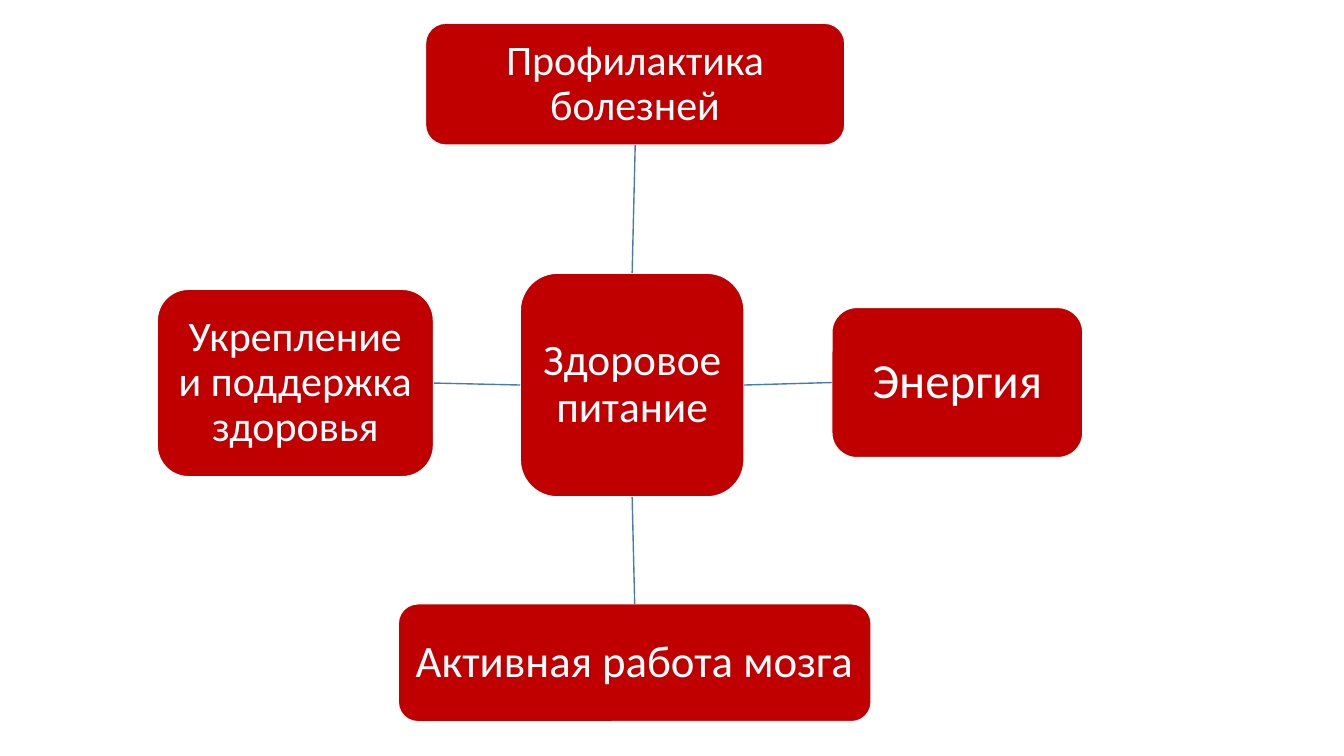
"""Builds a radial diagram of the benefits of healthy eating."""
from dataclasses import dataclass

from lxml import etree
from pptx import Presentation
from pptx.dml.color import RGBColor
from pptx.enum.shapes import MSO_CONNECTOR, MSO_SHAPE
from pptx.enum.text import MSO_ANCHOR, PP_ALIGN
from pptx.oxml.ns import qn
from pptx.util import Inches, Pt

ROUNDED = MSO_SHAPE.ROUNDED_RECTANGLE
STRAIGHT = MSO_CONNECTOR.STRAIGHT
MIDDLE = MSO_ANCHOR.MIDDLE
CENTER = PP_ALIGN.CENTER
TOP, LEFT, BOTTOM, RIGHT = range(4)


@dataclass(frozen=True)
class Theme:
    """Colours, font and type sizes of the slide."""
    box: RGBColor = RGBColor(0xC0, 0x00, 0x00)
    white: RGBColor = RGBColor(0xFF, 0xFF, 0xFF)
    spoke: RGBColor = RGBColor(0x49, 0x7C, 0xAB)
    font: str = "Calibri"
    hub: int = 31
    small: int = 30
    medium: int = 32
    large: int = 35


THEME = Theme()

HUB = ("Здоровое питание", (5.16, 2.71, 2.22, 2.22), THEME.hub, 0.09)
BENEFITS = [
    (TOP, BOTTOM, ("Профилактика болезней", (4.22, 0.23, 4.16, 1.21), THEME.small, 0.08)),
    (RIGHT, LEFT, ("Энергия", (8.25, 3.05, 2.49, 1.49), THEME.large, 0.1)),
    (BOTTOM, TOP, ("Активная работа мозга", (3.95, 5.99, 4.69, 1.17), THEME.medium, 0.09)),
    (LEFT, RIGHT, ("Укрепление и поддержка здоровья", (1.56, 2.87, 2.74, 1.86),
                   THEME.small, 0.08)),
]


def add_box(s, text, frame, size, inset):
    """Add a rounded box with centred white text."""
    sp = s.shapes.add_shape(ROUNDED, *map(Inches, frame))
    sp.shadow.inherit = False
    sp.fill.solid()
    sp.fill.fore_color.rgb = THEME.box
    sp.line.color.rgb = THEME.white
    sp.line.width = Pt(1)
    tf = sp.text_frame
    tf.word_wrap = True
    tf.vertical_anchor = MIDDLE
    tf.margin_left = tf.margin_right = tf.margin_top = tf.margin_bottom = Inches(inset)
    p = tf.paragraphs[0]
    p.text = text
    p.alignment = CENTER
    p.line_spacing = 0.9
    p.font.name = THEME.font
    p.font.size = Pt(size)
    p.font.color.rgb = THEME.white
    return sp


def add_spoke(s, hub, hub_side, box, box_side):
    """Join a side of the hub to the facing side of a box."""
    line = s.shapes.add_connector(STRAIGHT, 0, 0, 0, 0)
    line.begin_connect(hub, hub_side)
    line.end_connect(box, box_side)
    line.line.color.rgb = THEME.spoke
    line.line.width = Pt(1)
    etree.SubElement(line._element.spPr, qn("a:effectLst"))


def main():
    """Build and save the slide."""
    prs = Presentation()
    prs.slide_width, prs.slide_height = Inches(13.33), Inches(7.5)
    s = prs.slides.add_slide(prs.slide_layouts[6])
    hub = add_box(s, *HUB)
    for hub_side, box_side, benefit in BENEFITS:
        box = add_box(s, *benefit)
        add_spoke(s, hub, hub_side, box, box_side)
    prs.save("out.pptx")


if __name__ == "__main__":
    main()
